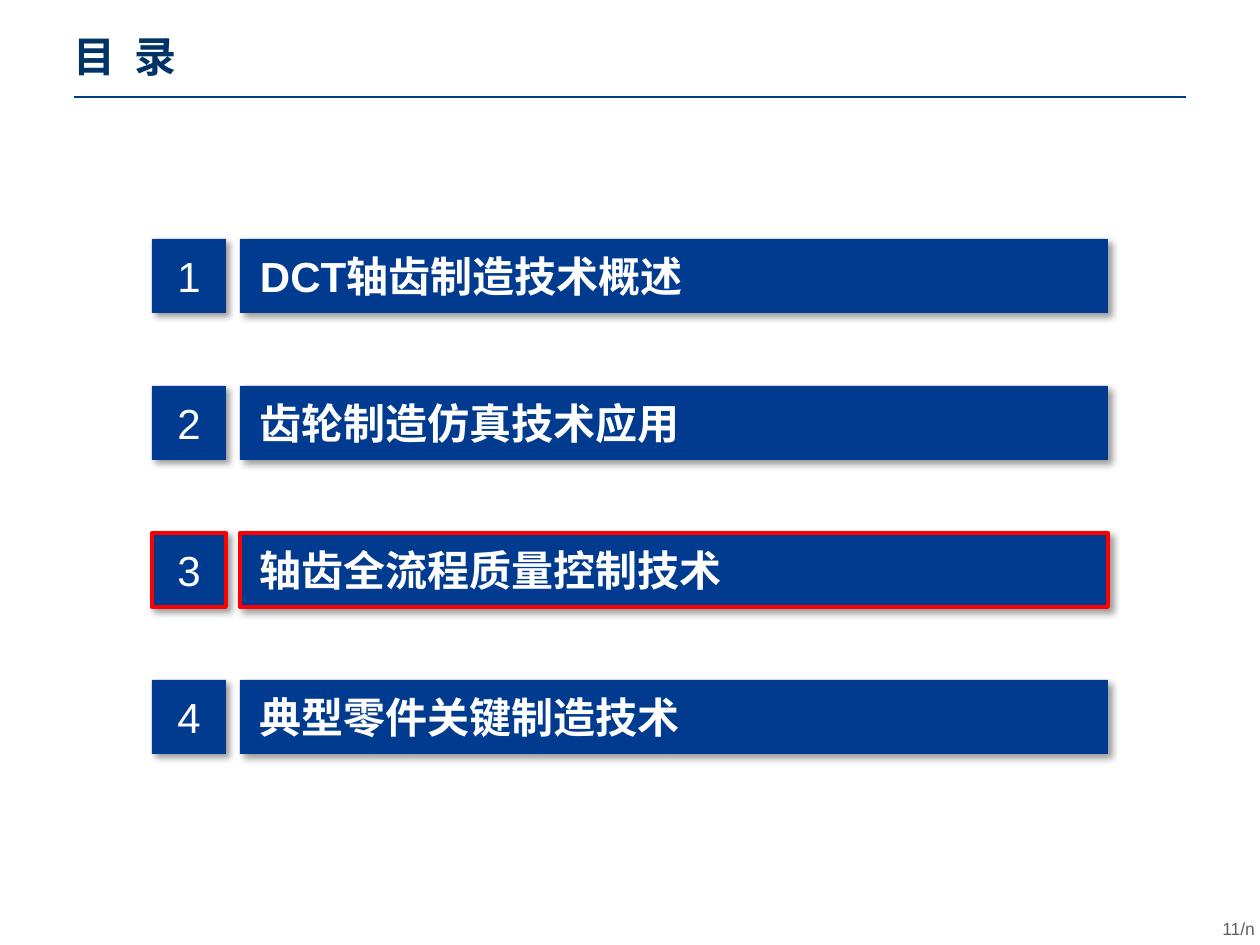
from lxml import etree
from pptx import Presentation
from pptx import util as u
from pptx.dml.color import RGBColor
from pptx.enum import shapes, text
from pptx.oxml import ns

SCALE = 914400 / 126  # EMU per px


def px(*lengths):
    return [u.Emu(round(n * SCALE)) for n in lengths]


def colour(hex_value):
    return RGBColor.from_string(hex_value)


class AgendaSlide:
    latin, cjk = "Arial", "Noto Sans CJK SC"
    navy, rule_blue, bar_blue = "003366", "003C82", "003B90"
    white, grey, red = "FFFFFF", "606060", "FF0000"

    def __init__(self, prs):
        self.slide = prs.slides.add_slide(prs.slide_layouts[5])

    def set_text(self, shape, runs, size, ink, bold=False, font=None,
                 align=text.PP_ALIGN.LEFT, anchor=text.MSO_ANCHOR.MIDDLE,
                 insets=(0, 0, 0, 0), wrap=True):
        frame = shape.text_frame
        left, top, right, bottom = px(*insets)
        frame_format = {"margin_left": left, "margin_top": top,
                        "margin_right": right, "margin_bottom": bottom,
                        "vertical_anchor": anchor, "word_wrap": wrap,
                        "auto_size": text.MSO_AUTO_SIZE.NONE}
        for key, value in frame_format.items():
            setattr(frame, key, value)
        paragraph = frame.paragraphs[0]
        paragraph.alignment = align
        for wording, spacing in runs:
            run = paragraph.add_run()
            run.text = wording
            font_format = {"size": u.Pt(size), "bold": bold, "name": font or self.latin}
            for key, value in font_format.items():
                setattr(run.font, key, value)
            run.font.color.rgb = colour(ink)
            props = run._r.get_or_add_rPr()
            if spacing:
                props.set("spc", str(spacing))
            east_asian = etree.Element(ns.qn("a:ea"), typeface=self.cjk)
            props.find(ns.qn("a:latin")).addnext(east_asian)

    def title(self, box, runs):
        heading = self.slide.shapes.title
        heading.left, heading.top, heading.width, heading.height = px(*box)
        self.set_text(heading, runs, 24, self.navy, bold=True, font=self.cjk,
                      insets=(13, 6, 13, 6), wrap=False)

    def rule(self, x1, x2, y):
        line = self.slide.shapes.add_connector(
            shapes.MSO_CONNECTOR.STRAIGHT, *px(x1, y, x2, y))
        line.line.color.rgb = colour(self.rule_blue)
        line.line.width = u.Pt(1.5)
        etree.SubElement(line._element.spPr, ns.qn("a:effectLst"))

    def page_number(self, box, wording):
        label = self.slide.shapes.add_textbox(*px(*box))
        self.set_text(label, [(wording, 0)], 10, self.grey, align=text.PP_ALIGN.RIGHT,
                      anchor=text.MSO_ANCHOR.TOP, insets=(13, 6, 13, 6))

    def block(self, group, box, wording, current, **text_format):
        block = group.shapes.add_shape(shapes.MSO_SHAPE.RECTANGLE, *px(*box))
        block.fill.solid()
        block.fill.fore_color.rgb = colour(self.bar_blue)
        if current:
            block.line.color.rgb = colour(self.red)
            block.line.width = u.Pt(2.25)
        else:
            block.line.fill.background()
        self.drop_shadow(block)
        self.set_text(block, [(wording, 0)], 24, self.white, **text_format)

    def drop_shadow(self, shape):
        shape.shadow.inherit = False
        effects = shape._element.spPr.find(ns.qn("a:effectLst"))
        shadow = etree.SubElement(
            effects, ns.qn("a:outerShdw"), blurRad=str(int(u.Pt(4))),
            dist=str(int(u.Pt(3))), dir=str(45 * 60000), algn="tl", rotWithShape="0")
        ink = etree.SubElement(shadow, ns.qn("a:srgbClr"), val="000000")
        etree.SubElement(ink, ns.qn("a:alpha"), val="40000")

    def chapter(self, top, number, name, current):
        row = self.slide.shapes.add_group_shape()
        self.block(row, (152, top, 74, 74), str(number), current,
                   align=text.PP_ALIGN.CENTER)
        self.block(row, (240, top, 868, 74), name, current, bold=True,
                   insets=(20, 0, 0, 0))


def main():
    prs = Presentation()
    prs.slide_width, prs.slide_height = px(1260, 945)
    agenda = AgendaSlide(prs)

    # Heading: the space is widened by letter spacing
    agenda.title((60, 24, 135, 63), [("目", 0), (" ", 540), ("录", 0)])
    agenda.rule(74, 1186, 97)

    # Chapters, with the current one outlined
    chapters = ["DCT轴齿制造技术概述", "齿轮制造仿真技术应用",
                "轴齿全流程质量控制技术", "典型零件关键制造技术"]
    current_chapter = 3
    first_top, pitch = 239, 147
    for number, name in enumerate(chapters, start=1):
        agenda.chapter(first_top + (number - 1) * pitch, number, name,
                       number == current_chapter)

    # Footer
    agenda.page_number((1204, 912, 64, 30), "11/n")
    prs.save("out.pptx")


if __name__ == "__main__":
    main()
